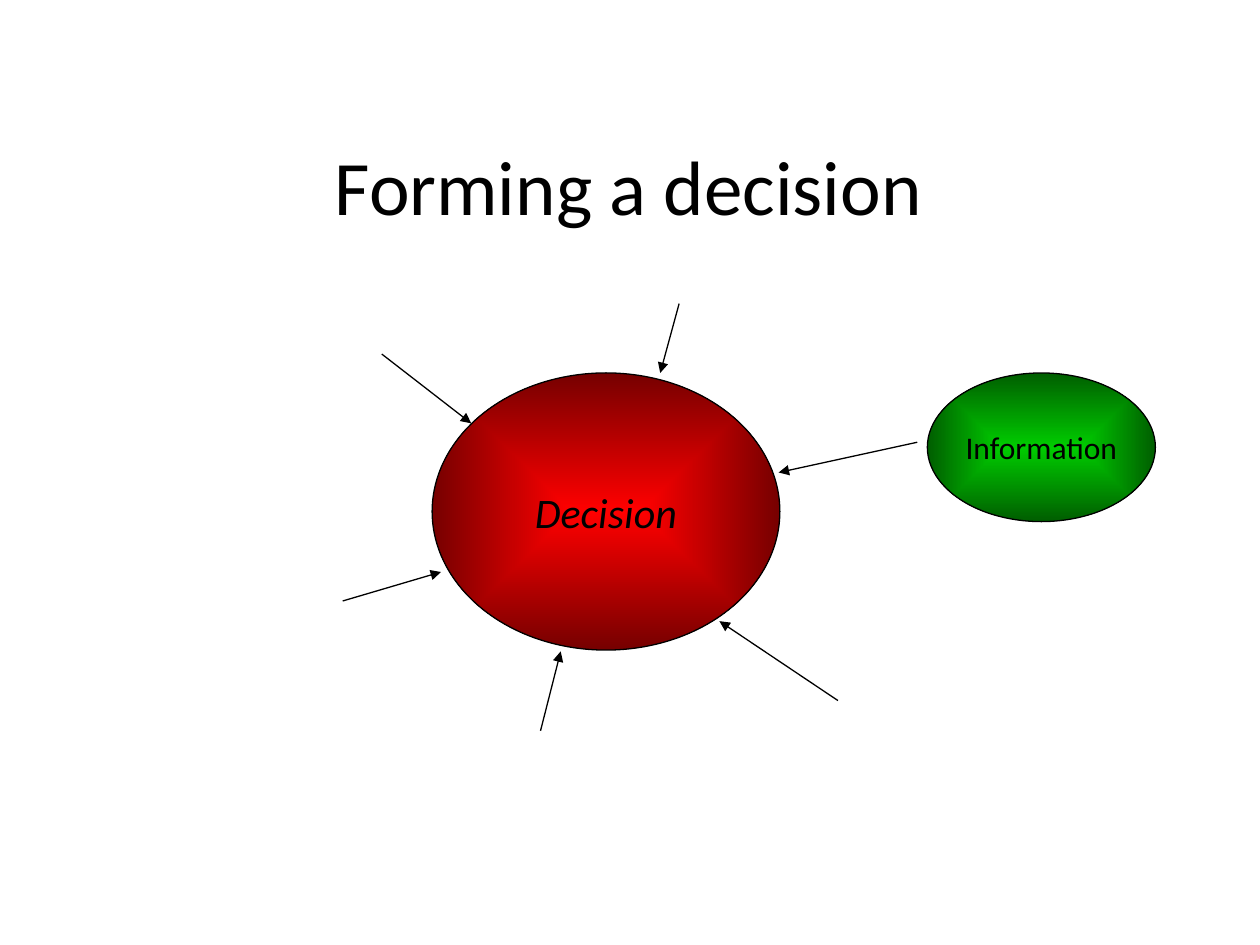
from lxml import etree
from pptx import Presentation
from pptx.dml.color import RGBColor
from pptx.enum.shapes import MSO_CONNECTOR, MSO_SHAPE
from pptx.enum.text import MSO_ANCHOR, PP_ALIGN
from pptx.oxml.ns import qn
from pptx.util import Inches, Pt

OVAL = MSO_SHAPE.OVAL
STRAIGHT = MSO_CONNECTOR.STRAIGHT
MIDDLE = MSO_ANCHOR.MIDDLE
CENTER = PP_ALIGN.CENTER
FONT, BLACK = "Calibri", "000000"

# Content: lengths in inches, text sizes in points
TITLE = ("Forming a decision", (0.35, 0.76, 9.28, 1.42), 44)
OVALS = [  # text, box, size, italic, centre colour, edge colour
    ("Decision", (3.43, 2.96, 2.76, 2.2), 24, True, "FF0000", "760000"),
    ("Information", (7.36, 2.96, 1.81, 1.18), 18, False, "00CC00", "005E00"),
]
ARROWS = [  # start, end at the decision
    ((3.03, 2.81), (3.74, 3.36)),
    ((2.72, 4.77), (3.5, 4.54)),
    ((4.29, 5.8), (4.45, 5.17)),
    ((6.65, 5.56), (5.71, 4.93)),
    ((7.28, 3.51), (6.18, 3.75)),
    ((5.39, 2.41), (5.24, 2.96)),
]


def color(value):
    return RGBColor.from_string(value)


def set_text(sp, text, size, italic=False, wrap=True):
    tf = sp.text_frame
    tf.text = text
    tf.word_wrap = wrap
    tf.vertical_anchor = MIDDLE
    p = tf.paragraphs[0]
    p.alignment = CENTER
    p.font.name, p.font.size, p.font.italic = FONT, Pt(size), italic
    p.font.color.rgb = color(BLACK)


def set_line(sp):
    sp.line.color.rgb = color(BLACK)
    sp.line.width = Pt(0.75)


def radial_fill(sp, *colors):
    sp.fill.gradient()
    for stop, value in zip(sp.fill.gradient_stops, colors):
        stop.color.rgb = color(value)
    grad = sp._element.spPr.find(qn("a:gradFill"))
    grad.remove(grad.find(qn("a:lin")))
    path = etree.SubElement(grad, qn("a:path"), path="shape")
    etree.SubElement(path, qn("a:fillToRect"),
                     {side: "50000" for side in "ltrb"})


def add_oval(s, text, box, size, italic, inner, outer):
    sp = s.shapes.add_shape(OVAL, *map(Inches, box))
    sp.shadow.inherit = False
    radial_fill(sp, inner, outer)
    set_line(sp)
    set_text(sp, text, size, italic, wrap=False)


def add_arrow(s, start, end):
    cx = s.shapes.add_connector(STRAIGHT, *map(Inches, start + end))
    set_line(cx)
    etree.SubElement(cx.line._get_or_add_ln(), qn("a:tailEnd"),
                     type="triangle")
    etree.SubElement(cx._element.spPr, qn("a:effectLst"))


def main():
    prs = Presentation()
    prs.slide_width, prs.slide_height = Inches(10), Inches(7.5)
    s = prs.slides.add_slide(prs.slide_layouts.get_by_name("Title Only"))

    # Title
    text, box, size = TITLE
    title = s.shapes.title
    title.left, title.top, title.width, title.height = map(Inches, box)
    set_text(title, text, size)

    # Decision and its information source
    for oval in OVALS:
        add_oval(s, *oval)

    # Arrows pointing at the decision
    for start, end in ARROWS:
        add_arrow(s, start, end)

    prs.save("out.pptx")


if __name__ == "__main__":
    main()
